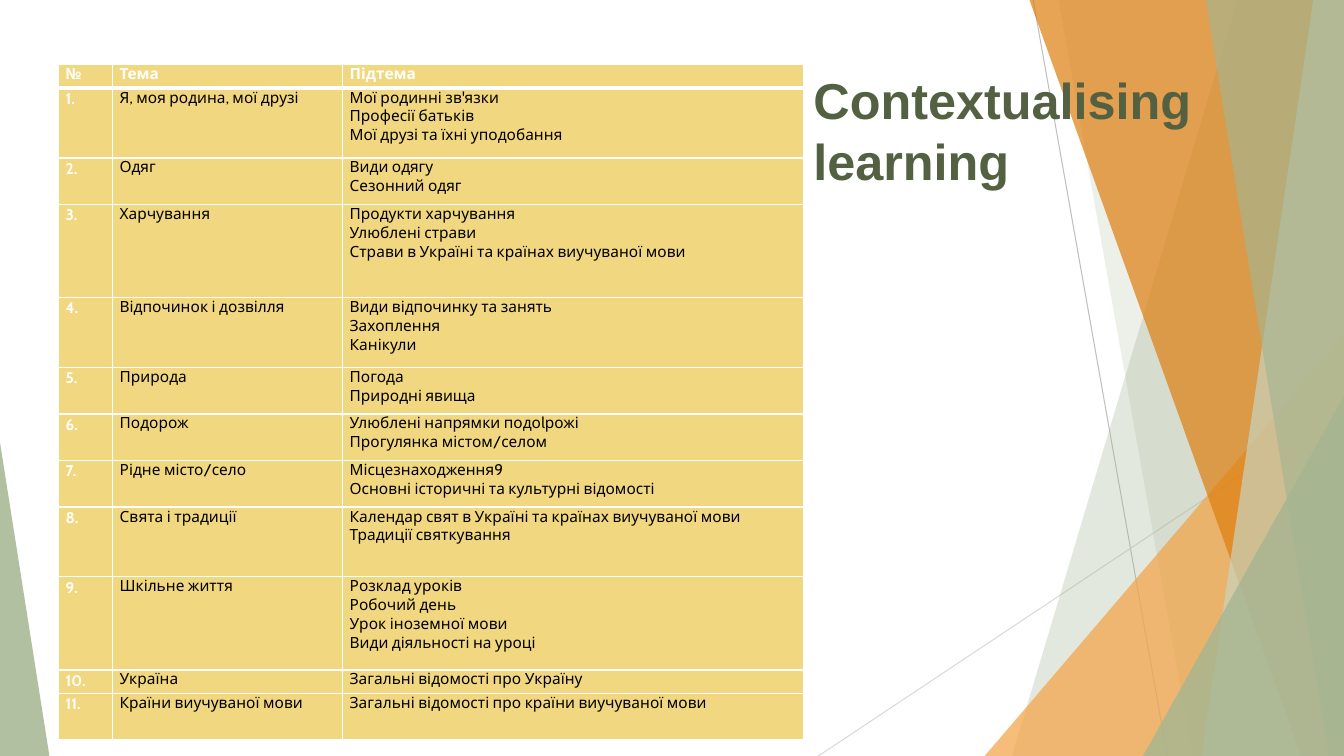
import pptx
import pptx.util
import pptx.dml.color
import pptx.enum.shapes
import pptx.enum.text
import pptx.oxml
import pptx.oxml.ns
import lxml.etree

Pt = pptx.util.Pt
qn = pptx.oxml.ns.qn
RGB = pptx.dml.color.RGBColor.from_string

theme = {
    "sage": "A5B592", "pale": "C9D3BE", "orange": "F3A447", "amber": "DD7E0E",
    "sand": "F1D77F", "white": "FFFFFF", "black": "000000", "moss": "536142",
    "line_dark": "BFBFBF", "line_light": "D9D9D9",
    "title_font": "Arial", "table_font": "Cabin", "title_size": 36, "table_size": 11,
}


def paint(shape, color, opacity):
    shape.shadow.inherit = False
    shape.line.fill.background()
    shape.fill.solid()
    shape.fill.fore_color.rgb = RGB(theme[color])
    tint = shape.fill._xPr.find(qn("a:solidFill"))[0]
    lxml.etree.SubElement(tint, qn("a:alpha"), val=str(opacity * 1000))


def write(para, words, font, size, color, bold):
    span = para.add_run()
    span.text = words
    span.font.name = theme[font]
    span.font.size = Pt(theme[size])
    span.font.color.rgb = RGB(theme[color])
    span.font.bold = bold


deck = pptx.Presentation()
width, height = 960, 540
deck.slide_width, deck.slide_height = Pt(width), Pt(height)
page = deck.slides.add_slide(deck.slide_layouts[5])

for start_x, start_y, end_x, color in [
    (738, 0, 833.8, "line_dark"),
    (width, 290.2, 584.6, "line_light"),
]:
    ray = page.shapes.add_connector(
        pptx.enum.shapes.MSO_CONNECTOR.STRAIGHT, Pt(start_x), Pt(start_y), Pt(end_x), Pt(height))
    ray.line.color.rgb = RGB(theme[color])
    ray.line.width = Pt(0.75)
    lxml.etree.SubElement(ray._element.spPr, qn("a:effectLst"))

bands = [
    ("band", (884.2, 722.9), "sage", 30),
    ("band", (756, 851.8), "sage", 20),
    ("triangle", (703.4, 239.8, 256.6, 1), "orange", 72),
    ("band", (735.1, 929.5), "amber", 70),
    ("band", (938.2, 858.2), "pale", 70),
    ("band", (861.1, 949), "sage", 65),
    ("triangle", (816.5, 283, 143.5, 1), "sage", 80),
    ("triangle", (0, 316.1, 35.3, 0), "sage", 85),
]
for kind, place, color, opacity in bands:
    if kind == "band":
        top_x, bottom_x = place
        outline = page.shapes.build_freeform(Pt(top_x), Pt(-0.7))
        outline.add_line_segments(
            [(Pt(width), Pt(-0.7)), (Pt(width), Pt(height)), (Pt(bottom_x), Pt(height))], close=True)
        shape = outline.convert_to_shape()
    else:
        left, top, span_x, apex = place
        shape = page.shapes.add_shape(
            pptx.enum.shapes.MSO_SHAPE.ISOSCELES_TRIANGLE,
            Pt(left), Pt(top), Pt(span_x), Pt(height - top))
        shape.adjustments[0] = apex
    paint(shape, color, opacity)

title = page.shapes.title
title.left, title.top, title.width, title.height = Pt(573.8), Pt(46), Pt(297.4), Pt(123.8)
title.element.getparent().append(title.element)
frame = title.text_frame
frame.word_wrap = True
frame.auto_size = pptx.enum.text.MSO_AUTO_SIZE.NONE
frame.vertical_anchor = pptx.enum.text.MSO_ANCHOR.TOP
frame.paragraphs[0].alignment = pptx.enum.text.PP_ALIGN.LEFT
write(frame.paragraphs[0], "Contextualising learning", "title_font", "title_size", "moss", True)

topics = [
    (1, "Тема", ["Підтема"]),
    (3, "Я, моя родина, мої друзі",
     ["Мої родинні зв'язки", "Професії батьків", "Мої друзі та їхні уподобання"]),
    (2, "Одяг", ["Види одягу", "Сезонний одяг"]),
    (4, "Харчування",
     ["Продукти харчування", "Улюблені страви", "Страви в Україні та країнах виучуваної мови"]),
    (3, "Відпочинок і дозвілля", ["Види відпочинку та занять", "Захоплення", "Канікули"]),
    (2, "Природа", ["Погода", "Природні явища"]),
    (2, "Подорож", ["Улюблені напрямки подоlрожі", "Прогулянка містом/селом"]),
    (2, "Рідне місто/село",
     ["Місцезнаходження9", "Основні історичні та культурні відомості"]),
    (3, "Свята і традиції",
     ["Календар свят в Україні та країнах виучуваної мови", "Традиції святкування"]),
    (4, "Шкільне життя",
     ["Розклад уроків", "Робочий день", "Урок іноземної мови", "Види діяльності на уроці"]),
    (1, "Україна", ["Загальні відомості про Україну"]),
    (2, "Країни виучуваної мови", ["Загальні відомості про країни виучуваної мови"]),
]
column_widths = [38.6, 164.3, 329]
row_unit = 16.63
total_units = sum(units for units, topic, subtopics in topics)
table = page.shapes.add_table(
    len(topics), len(column_widths), Pt(41.9), Pt(46.3),
    Pt(sum(column_widths)), Pt(row_unit * total_units)).table
table.horz_banding = False
for column, column_width in zip(table.columns, column_widths):
    column.width = Pt(column_width)

for row, (units, topic, subtopics) in enumerate(topics):
    table.rows[row].height = Pt(row_unit * units)
    number = f"{row}." if row else "№"
    for column, lines in enumerate([[number], [topic], subtopics]):
        cell = table.cell(row, column)
        cell.margin_left = cell.margin_right = Pt(5)
        cell.margin_top = cell.margin_bottom = Pt(0)
        properties = cell._tc.get_or_add_tcPr()
        for side in ["lnL", "lnR", "lnT", "lnB"]:
            thick = (row, side) in [(0, "lnB"), (1, "lnT")]
            border = lxml.etree.SubElement(properties, qn(f"a:{side}"), w=str(Pt(3 if thick else 1)))
            stroke = lxml.etree.SubElement(border, qn("a:solidFill"))
            lxml.etree.SubElement(stroke, qn("a:srgbClr"), val=theme["white"])
        cell.fill.solid()
        cell.fill.fore_color.rgb = RGB(theme["sand"])
        heading = row == 0 or column == 0
        for index, words in enumerate(lines):
            para = cell.text_frame.add_paragraph() if index else cell.text_frame.paragraphs[0]
            if row and column == 0:
                para.line_spacing = 1.07
            write(para, words, "table_font", "table_size", "white" if heading else "black", heading)

deck.save("out.pptx")
